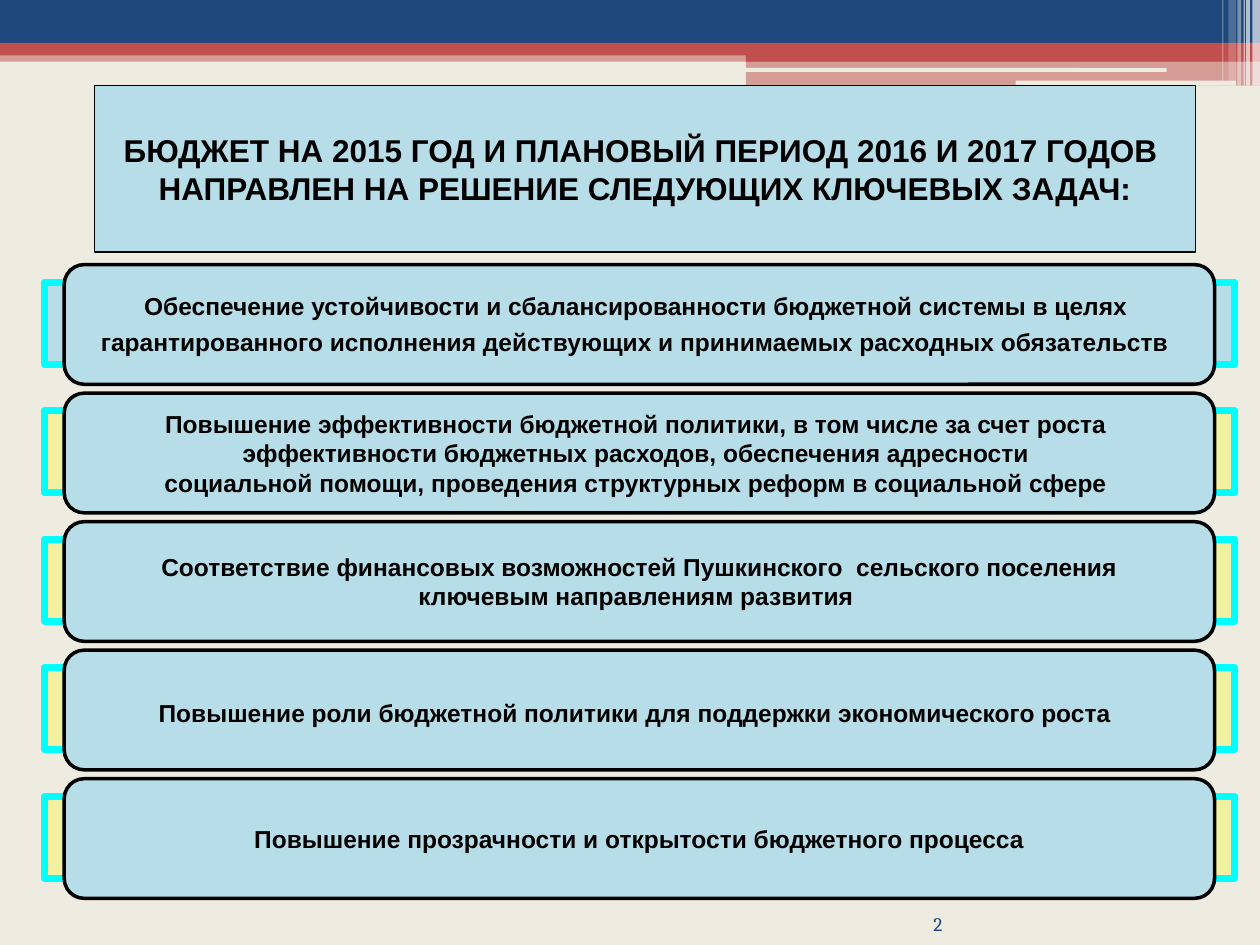
from dataclasses import dataclass

from lxml import etree
from pptx import Presentation
from pptx.dml.color import RGBColor
from pptx.enum import shapes, text
from pptx.oxml import ns
from pptx.util import Inches, Pt

COLOURS = {
    "cream": "EEECE1",
    "navy": "1F497D",
    "red": "C0504D",
    "white": "FFFFFF",
    "sky": "B7DEE8",
    "cyan": "00FFFF",
    "yellow": "FFFF00",
    "black": "000000",
}
RECT = shapes.MSO_SHAPE.RECTANGLE
ROUNDED = shapes.MSO_SHAPE.ROUNDED_RECTANGLE


@dataclass(frozen=True)
class Box:
    left: float
    top: float
    width: float
    height: float
    colour: str
    opacity: int = 100
    kind: shapes.MSO_SHAPE = RECT
    line: str = ""
    line_width: float = 0


@dataclass(frozen=True)
class Words:
    wording: str
    size: int = 14
    bold: bool = True
    font: str = "Arial"
    colour: str = "black"


Lines = list[list[Words]]

HEADER = [
    Box(0, 0.4, 10, 0.09, "red", 50),
    Box(0, 0, 10, 0.34, "navy"),
    Box(0, 0.34, 10, 0.1, "red"),
    Box(5.92, 0.39, 4.08, 0.1, "red"),
    Box(5.92, 0.48, 4.08, 0.2, "red", 50),
    Box(5.91, 0.54, 3.35, 0.03, "cream", kind=ROUNDED),
    Box(8.06, 0.64, 1.75, 0.04, "cream", kind=ROUNDED),
    Box(9.94, 0, 0.06, 0.68, "white", 65),
    Box(9.89, 0, 0.03, 0.68, "white", 65),
    Box(9.87, 0, 0.01, 0.68, "white", 60),
    Box(9.82, 0, 0.03, 0.68, "white", 40),
    Box(9.75, 0, 0.06, 0.64, "white", 20),
    Box(9.7, 0, 0.01, 0.64, "white", 30),
]
TITLE: Lines = [
    [Words("БЮДЖЕТ НА 2015 ГОД И ПЛАНОВЫЙ ПЕРИОД 2016 И 2017 ГОДОВ ", 18)],
    [Words("НАПРАВЛЕН НА РЕШЕНИЕ СЛЕДУЮЩИХ КЛЮЧЕВЫХ ЗАДАЧ:", 18)],
]
LARGE_SPACE = Words(" ", 18, bold=False)
TASKS: list[Lines] = [
    [
        [Words("Обеспечение устойчивости и сбалансированности бюджетной системы в целях ")],
        [Words("гарантированного исполнения действующих и принимаемых расходных обязательств"),
         LARGE_SPACE],
    ],
    [
        [Words("Повышение эффективности бюджетной политики, в том числе за счет роста ")],
        [Words("эффективности бюджетных расходов, обеспечения адресности ")],
        [Words("социальной помощи, проведения структурных реформ в социальной сфере ")],
    ],
    [
        [Words("Соответствие финансовых возможностей Пушкинского  сельского поселения")],
        [Words("ключевым направлениям развития ")],
    ],
    [
        [Words("Повышение роли бюджетной политики для поддержки экономического роста"),
         LARGE_SPACE],
    ],
    [[Words("Повышение прозрачности и открытости бюджетного процесса")]],
]
FIRST_TASK_TOP = 2.1
TASK_PITCH = 1.02
BACK_OFFSET = 0.14


def rgb(name: str) -> RGBColor:
    return RGBColor.from_string(COLOURS[name])


def draw_box(slide, box: Box):
    shape = slide.shapes.add_shape(
        box.kind, Inches(box.left), Inches(box.top), Inches(box.width), Inches(box.height)
    )
    shape.shadow.inherit = False
    shape.fill.solid()
    shape.fill.fore_color.rgb = rgb(box.colour)
    if box.opacity < 100:
        colour = shape.fill._xPr.find(".//" + ns.qn("a:srgbClr"))
        etree.SubElement(colour, ns.qn("a:alpha"), val=str(box.opacity * 1000))
    if box.line:
        shape.line.color.rgb = rgb(box.line)
        shape.line.width = Pt(box.line_width)
    else:
        shape.line.fill.background()
    return shape


def write_lines(frame, lines: Lines, align=text.PP_ALIGN.CENTER) -> None:
    for index, line in enumerate(lines):
        paragraph = frame.add_paragraph() if index else frame.paragraphs[0]
        paragraph.alignment = align
        for words in line:
            run = paragraph.add_run()
            run.text = words.wording
            run.font.name = words.font
            run.font.size = Pt(words.size)
            run.font.bold = words.bold
            run.font.color.rgb = rgb(words.colour)


def draw_panel(slide, box: Box, lines: Lines) -> None:
    """Draw a box with unwrapped text in its middle."""
    frame = draw_box(slide, box).text_frame
    frame.word_wrap = False
    frame.vertical_anchor = text.MSO_ANCHOR.MIDDLE
    write_lines(frame, lines)


def draw_task(slide, index: int, lines: Lines) -> None:
    top = FIRST_TASK_TOP + index * TASK_PITCH
    colour, opacity = ("yellow", 28) if index else ("sky", 100)
    draw_box(slide, Box(0.35, top + BACK_OFFSET, 9.45, 0.65, colour, opacity,
                        line="cyan", line_width=4))
    draw_panel(slide, Box(0.51, top, 9.13, 0.95, "sky", kind=ROUNDED,
                          line="black", line_width=2), lines)


def draw_page_number(slide, number: str) -> None:
    frame = slide.shapes.add_textbox(
        Inches(6.84), Inches(7.17), Inches(0.64), Inches(0.25)
    ).text_frame
    frame.word_wrap = True
    frame.vertical_anchor = text.MSO_ANCHOR.BOTTOM
    frame.margin_left = frame.margin_right = frame.margin_top = frame.margin_bottom = 0
    write_lines(frame, [[Words(number, 11, False, "Cambria", "navy")]], text.PP_ALIGN.RIGHT)


def main() -> None:
    deck = Presentation()
    deck.slide_width, deck.slide_height = Inches(10), Inches(7.5)
    slide = deck.slides.add_slide(deck.slide_layouts[6])
    slide.background.fill.solid()
    slide.background.fill.fore_color.rgb = rgb("cream")

    for band in HEADER:
        draw_box(slide, band)
    draw_page_number(slide, "2")
    draw_panel(slide, Box(0.75, 0.68, 8.74, 1.32, "sky", line="black", line_width=0.75), TITLE)
    for index, lines in enumerate(TASKS):
        draw_task(slide, index, lines)
    deck.save("out.pptx")


if __name__ == "__main__":
    main()
